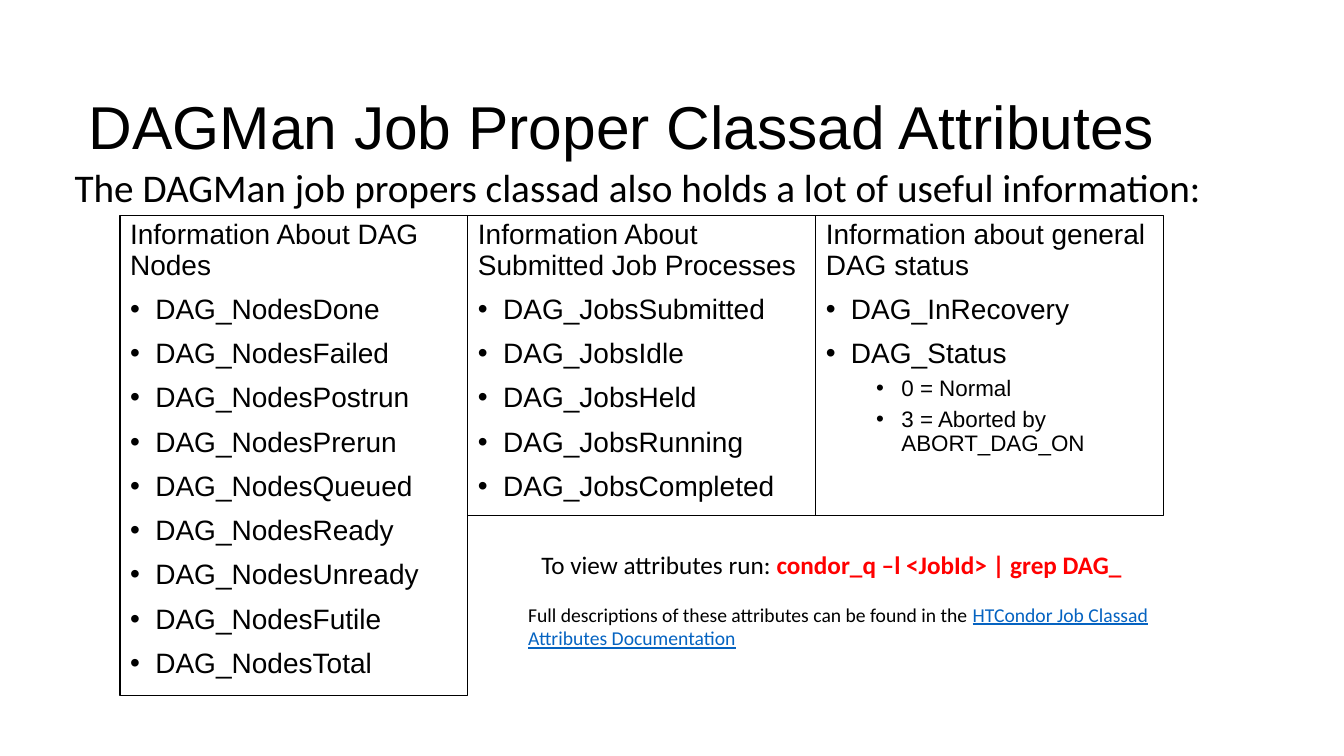
"""Build the slide on the classad attributes of the DAGMan job proper."""
from dataclasses import dataclass

from lxml import etree
from pptx import Presentation
from pptx import util as u
from pptx.dml import color
from pptx.enum import text
from pptx.oxml import ns

PX = 9144
BLACK, RED, LINK = "000000", "FF0000", "0563C1"
LEFT, TOP, COLUMN_W = 119, 214, 345


@dataclass
class Run:
    """A stretch of text with one format."""
    words: str
    size: float
    font: str = "Calibri"
    colour: str = BLACK
    bold: bool = False
    underline: bool = False


@dataclass
class Column:
    """A bordered list of attributes under a heading."""
    placeholder: int
    height: int
    heading: str
    items: list[str]
    details: list[str]


@dataclass
class Note:
    """A plain text box."""
    box: tuple[int, int, int, int]
    runs: list[Run]


COLUMNS = [
    Column(1, 476, "Information About DAG Nodes",
           [f"DAG_Nodes{state}" for state in (
               "Done", "Failed", "Postrun", "Prerun", "Queued",
               "Ready", "Unready", "Futile", "Total")], []),
    Column(2, 297, "Information About Submitted Job Processes",
           [f"DAG_Jobs{state}" for state in (
               "Submitted", "Idle", "Held", "Running", "Completed")], []),
    Column(3, 297, "Information about general DAG status",
           ["DAG_InRecovery", "DAG_Status"],
           ["0 = Normal", "3 = Aborted by ABORT_DAG_ON"]),
]

NOTES = [
    Note((514, 593, 640, 57), [
        Run("Full descriptions of these attributes can be found in the ", 14),
        Run("HTCondor Job Classad Attributes Documentation", 14,
            colour=LINK, underline=True)]),
    Note((527, 540, 612, 40), [
        Run("To view attributes run: ", 18),
        Run("condor_q –l <JobId> | grep DAG_", 18, colour=RED, bold=True)]),
]


def rgb(value: str) -> color.RGBColor:
    """Turn a hex string into a colour."""
    return color.RGBColor.from_string(value)


def place(sp, box: tuple[int, int, int, int]) -> None:
    """Move and size a shape in px."""
    sp.left, sp.top, sp.width, sp.height = (u.Emu(n * PX) for n in box)


def frame(sp, anchor=text.MSO_ANCHOR.TOP, fit=text.MSO_AUTO_SIZE.NONE):
    """Prepare the text frame of a shape."""
    tf = sp.text_frame
    tf.word_wrap, tf.auto_size, tf.vertical_anchor = True, fit, anchor
    return tf


def write(p, runs: list[Run], spacing: float = 1.0, before: int = 0) -> None:
    """Fill a paragraph run by run."""
    p.alignment = text.PP_ALIGN.LEFT
    p.line_spacing, p.space_before = spacing, u.Pt(before)
    for item in runs:
        r = p.add_run()
        r.text = item.words
        r.font.name, r.font.size = item.font, u.Pt(item.size)
        r.font.bold, r.font.underline = item.bold, item.underline
        r.font.color.rgb = rgb(item.colour)


def bullet(p, margin: int = 0, shown: bool = True) -> None:
    """Set the indent of a paragraph in px and show or hide its bullet."""
    pPr = p._p.get_or_add_pPr()
    pPr.set("marL", str(margin * PX))
    pPr.set("indent", str(-25 * PX if shown else 0))
    if shown:
        etree.SubElement(pPr, ns.qn("a:buFont")).set("typeface", "Arial")
        etree.SubElement(pPr, ns.qn("a:buChar")).set("char", "•")
    else:
        etree.SubElement(pPr, ns.qn("a:buNone"))


def draw_column(s, column: Column, left: int) -> None:
    """Draw one bordered list."""
    sp = s.placeholders[column.placeholder]
    place(sp, (left, TOP, COLUMN_W, column.height))
    sp.line.color.rgb, sp.line.width = rgb(BLACK), u.Pt(0.75)
    tf = frame(sp)
    p = tf.paragraphs[0]
    bullet(p, shown=False)
    write(p, [Run(column.heading, 20, "Arial")], 0.9)
    for level, lines in enumerate((column.items, column.details)):
        for line in lines:
            p = tf.add_paragraph()
            p.level = level
            bullet(p, 25 + 50 * level)
            write(p, [Run(line, 20 - 4 * level, "Arial")], 0.9, 10 - 5 * level)


def draw_note(s, note: Note) -> None:
    """Draw one text box."""
    sp = s.shapes.add_textbox(0, 0, 0, 0)
    place(sp, note.box)
    tf = frame(sp, fit=text.MSO_AUTO_SIZE.SHAPE_TO_FIT_TEXT)
    write(tf.paragraphs[0], note.runs)


def main() -> None:
    """Build and save the slide."""
    prs = Presentation()
    prs.slide_width, prs.slide_height = u.Emu(1333 * PX), u.Emu(750 * PX)
    s = prs.slides.add_slide(prs.slide_layouts.get_by_name("Comparison"))

    title = s.shapes.title
    place(title, (78, 56, 1122, 145))
    tf = frame(title, text.MSO_ANCHOR.MIDDLE)
    write(tf.paragraphs[0],
          [Run("DAGMan Job Proper Classad Attributes", 43.2, "Arial")], 0.9)

    intro = s.placeholders[4]
    place(intro, (64, 157, 1150, 57))
    p = frame(intro).paragraphs[0]
    bullet(p, shown=False)
    write(p, [Run("The DAGMan job propers classad also holds "
                  "a lot of useful information:", 28)])

    for i, column in enumerate(COLUMNS):
        draw_column(s, column, LEFT + i * COLUMN_W)
    for note in NOTES:
        draw_note(s, note)
    prs.save("out.pptx")


if __name__ == "__main__":
    main()
